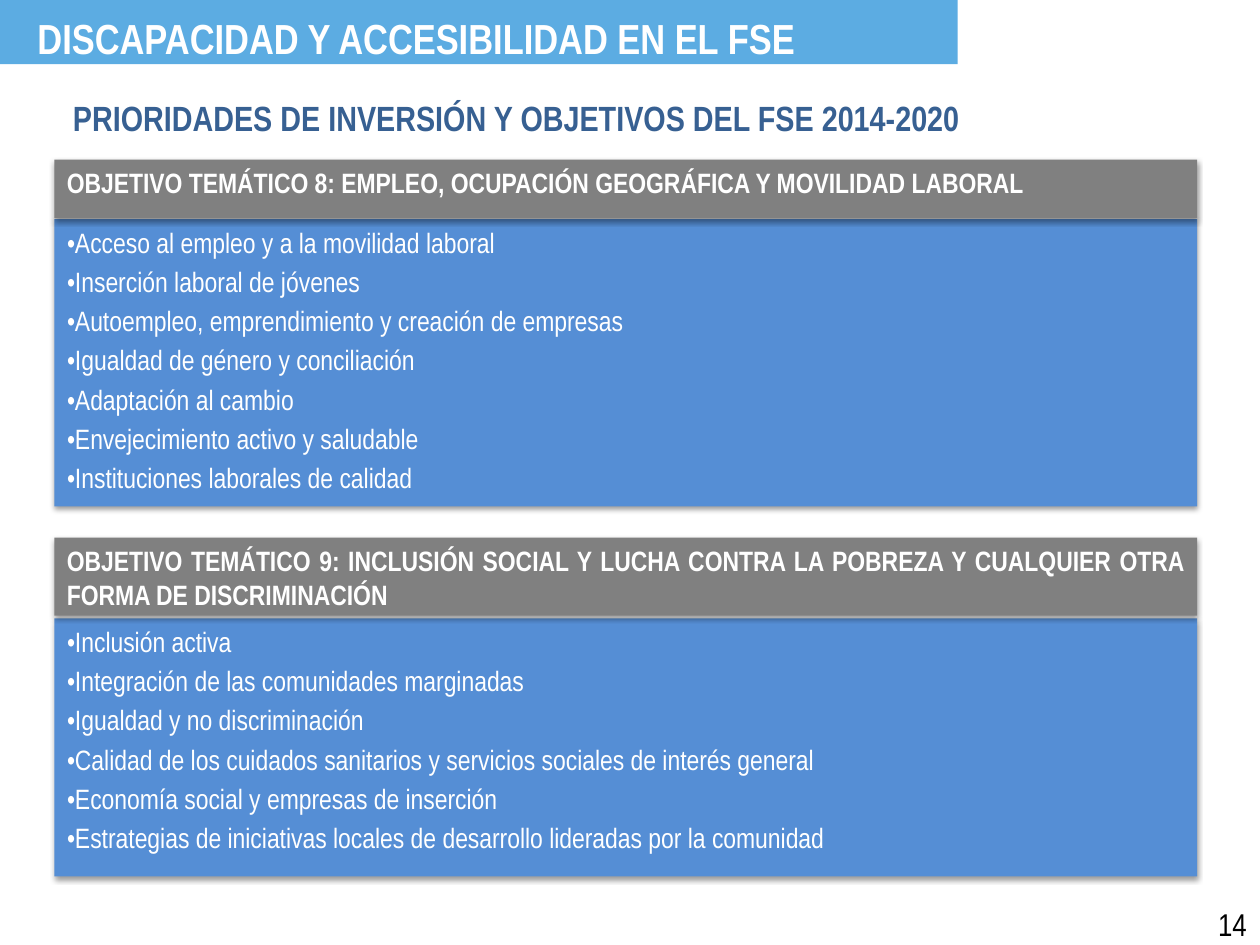
from dataclasses import dataclass

import pptx
import pptx.dml.color
import pptx.enum.shapes
import pptx.enum.text
import pptx.oxml
import pptx.oxml.ns
import pptx.util
from lxml import etree

Pt = pptx.util.Pt
RGBColor = pptx.dml.color.RGBColor
Align = pptx.enum.text.PP_ALIGN
RECT = pptx.enum.shapes.MSO_SHAPE.RECTANGLE
qn = pptx.oxml.ns.qn

FONT = "Arial Narrow"
SKY = RGBColor(0x5C, 0xAC, 0xE2)
BLUE = RGBColor(0x55, 0x8E, 0xD5)
NAVY = RGBColor(0x37, 0x60, 0x92)
GRAY = RGBColor(0x80, 0x80, 0x80)
WHITE = RGBColor(0xFF, 0xFF, 0xFF)
BLACK = RGBColor(0x00, 0x00, 0x00)
LEFT, WIDTH = 31.1, 653


@dataclass
class Style:
    size: float
    color: RGBColor
    bold: bool = False
    align: Align = Align.JUSTIFY
    line: float = 1.0


@dataclass
class Panel:
    head: str
    top: float
    tall: float
    body_top: float
    body_tall: float
    items: list[str]


HEAD = Style(16, WHITE, bold=True)
ITEM = Style(16, WHITE)

PANELS = [
    Panel(
        "OBJETIVO TEMÁTICO 8: EMPLEO, OCUPACIÓN GEOGRÁFICA Y MOVILIDAD LABORAL",
        91.2, 33.5, 125.2, 164.2,
        [
            "Acceso al empleo y a la movilidad laboral",
            "Inserción laboral de jóvenes",
            "Autoempleo, emprendimiento y creación de empresas",
            "Igualdad de género y conciliación",
            "Adaptación al cambio",
            "Envejecimiento activo y saludable",
            "Instituciones laborales de calidad",
        ],
    ),
    Panel(
        "OBJETIVO TEMÁTICO 9: INCLUSIÓN SOCIAL Y LUCHA CONTRA LA POBREZA "
        "Y CUALQUIER OTRA FORMA DE DISCRIMINACIÓN",
        307.2, 44.6, 353.3, 147.5,
        [
            "Inclusión activa",
            "Integración de las comunidades marginadas",
            "Igualdad y no discriminación",
            "Calidad de los cuidados sanitarios y servicios sociales de interés general",
            "Economía social y empresas de inserción",
            "Estrategias de iniciativas locales de desarrollo lideradas por la comunidad",
        ],
    ),
]


def place(shape, left: float, top: float, width: float, tall: float) -> None:
    shape.left, shape.top = Pt(left), Pt(top)
    shape.width, shape.height = Pt(width), Pt(tall)


def paint(shape, color: RGBColor, shade: bool = True) -> None:
    shape.fill.solid()
    shape.fill.fore_color.rgb = color
    shape.line.fill.background()
    shape.shadow.inherit = False
    if shade:
        group = shape._element.spPr.find(qn("a:effectLst"))
        glow = etree.SubElement(
            group, qn("a:outerShdw"), blurRad=str(Pt(3.1)),
            dist=str(Pt(1.6)), dir="5400000", rotWithShape="0")
        tint = etree.SubElement(glow, qn("a:srgbClr"), val=str(BLACK))
        etree.SubElement(tint, qn("a:alpha"), val="38000")


def write(shape, lines: list[str], style: Style) -> None:
    frame = shape.text_frame
    frame.word_wrap = True
    frame.auto_size = pptx.enum.text.MSO_AUTO_SIZE.NONE
    frame.vertical_anchor = pptx.enum.text.MSO_ANCHOR.TOP
    for i, line in enumerate(lines):
        para = frame.add_paragraph() if i else frame.paragraphs[0]
        para.alignment = style.align
        para.line_spacing = style.line
        para.space_before = Pt(style.size * 0.2 if i else 0)
        props = para._p.get_or_add_pPr()
        props.set("marL", "0")
        props.set("indent", "0")
        etree.SubElement(props, qn("a:buNone"))
        run = para.add_run()
        run.text = line
        run.font.name = FONT
        run.font.size = Pt(style.size)
        run.font.bold = style.bold
        run.font.color.rgb = style.color


def label(slide, box: tuple, text: str, style: Style) -> None:
    shape = slide.shapes.add_textbox(*map(Pt, box))
    write(shape, [text], style)


def draw(slide, panel: Panel, body) -> None:
    place(body, LEFT, panel.body_top, WIDTH, panel.body_tall)
    paint(body, BLUE)
    write(body, [f"•{item}" for item in panel.items], ITEM)
    head = slide.shapes.add_shape(
        RECT, Pt(LEFT), Pt(panel.top), Pt(WIDTH), Pt(panel.tall))
    paint(head, GRAY)
    write(head, [panel.head], HEAD)


def main() -> None:
    deck = pptx.Presentation()
    deck.slide_width, deck.slide_height = Pt(720), Pt(540)
    slide = deck.slides.add_slide(deck.slide_layouts[3])
    title, *bodies = slide.placeholders

    band = slide.shapes.add_shape(RECT, 0, 0, Pt(547.2), Pt(36.7))
    paint(band, SKY, shade=False)
    slide.shapes._spTree.insert(2, band._element)

    place(title, 14.2, 3.6, 504, 26.6)
    write(title, ["DISCAPACIDAD Y ACCESIBILIDAD EN EL FSE"],
          Style(24, WHITE, bold=True))
    label(slide, (34.6, 54.5, 646.5, 29),
          "PRIORIDADES DE INVERSIÓN Y OBJETIVOS DEL FSE 2014-2020",
          Style(20, NAVY, bold=True, align=Align.LEFT, line=0.9))
    for panel, body in zip(PANELS, bodies):
        draw(slide, panel, body)
    label(slide, (689, 513.6, 57, 29), "14",
          Style(18, BLACK, align=Align.LEFT))
    deck.save("out.pptx")


if __name__ == "__main__":
    main()
